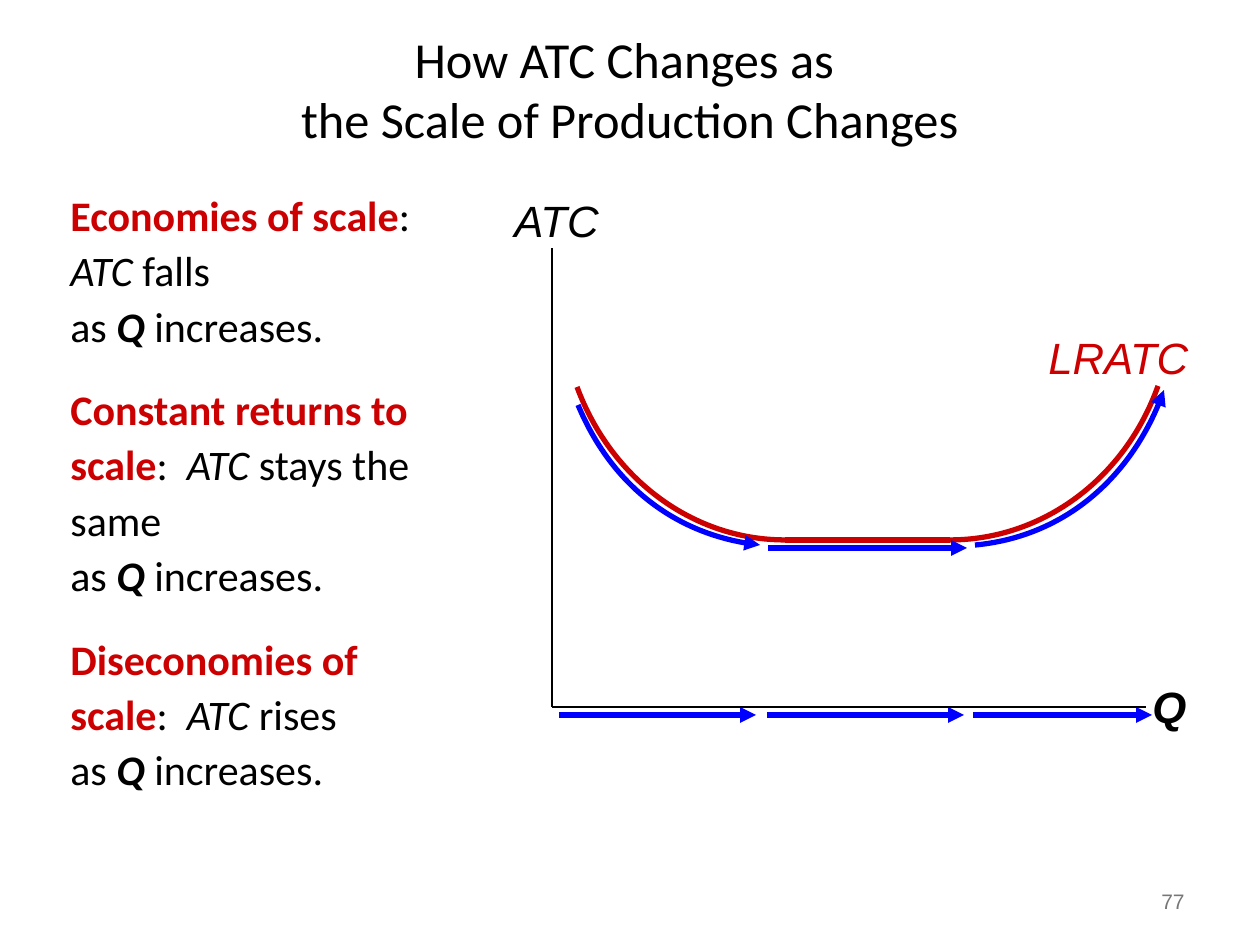
from dataclasses import dataclass

from lxml.etree import SubElement
from pptx import Presentation
from pptx.dml.color import RGBColor as RGB
from pptx.enum.shapes import MSO_CONNECTOR as Connector
from pptx.enum.text import MSO_ANCHOR as Anchor, PP_ALIGN as Align
from pptx.oxml.ns import qn
from pptx.util import Pt

EMU_PER_PX = 914400 / 126


@dataclass(frozen=True)
class Theme:
    black: RGB = RGB(0x00, 0x00, 0x00)
    red: RGB = RGB(0xCC, 0x00, 0x00)
    blue: RGB = RGB(0x00, 0x00, 0xFF)
    grey: RGB = RGB(0x77, 0x77, 0x77)
    heading_font: str = "Calibri"
    label_font: str = "Arial"
    title_size: float = 28.8
    body_size: float = 24
    label_size: float = 25
    number_size: float = 12
    curve_width: float = 3
    axis_width: float = 0.75


THEME = Theme()


def px(length):
    return round(length * EMU_PER_PX)


def add_text(slide, box, paragraphs, *, font, size, color=THEME.black,
             align=Align.LEFT, anchor=Anchor.TOP, line_spacing=None,
             space_before=0, italic=False, bold=False):
    """Each paragraph is a list of (words, overrides); a newline is a line break."""
    frame = slide.shapes.add_textbox(*map(px, box)).text_frame
    frame.word_wrap = True
    frame.vertical_anchor = anchor
    for index, pieces in enumerate(paragraphs):
        paragraph = frame.add_paragraph() if index else frame.paragraphs[0]
        paragraph.alignment = align
        paragraph.line_spacing = line_spacing
        paragraph.space_before = Pt(space_before)
        for words, override in pieces:
            for number, line in enumerate(words.split("\n")):
                if number:
                    paragraph.add_line_break()
                run = paragraph.add_run()
                run.text = line
                run.font.name = font
                run.font.size = Pt(size)
                run.font.bold = override.get("bold", bold)
                run.font.italic = override.get("italic", italic)
                run.font.color.rgb = override.get("color", color)


def style_stroke(stroke, color, width, arrow):
    stroke.line.color.rgb = color
    stroke.line.width = Pt(width)
    if arrow:
        SubElement(stroke.line._get_or_add_ln(), qn("a:tailEnd"), type="triangle")


def add_line(slide, start, end, color, width=THEME.curve_width, arrow=False):
    line = slide.shapes.add_connector(Connector.STRAIGHT, *map(px, start + end))
    style_stroke(line, color, width, arrow)
    SubElement(line._element.spPr, qn("a:effectLst"))


def add_curve(slide, points, color, arrow=False):
    """Draw one cubic curve from start, two control points and end."""
    start, *others = [(px(x), px(y)) for x, y in points]
    builder = slide.shapes.build_freeform(*start)
    builder.add_line_segments(others, close=False)
    curve = builder.convert_to_shape()
    curve.shadow.inherit = False
    curve.fill.background()
    style_stroke(curve, color, THEME.curve_width, arrow)
    # Merge the three straight segments into one Bézier segment
    segments = curve._element.findall(".//" + qn("a:lnTo"))
    outline = segments[0].getparent()
    bezier = SubElement(outline, qn("a:cubicBezTo"))
    for segment in segments:
        bezier.append(segment[0])
        outline.remove(segment)


def scale_effect(term, effect):
    return [
        (term, {"bold": True, "color": THEME.red}),
        (":  ", {}),
        ("ATC", {"italic": True}),
        (f" {effect} \nas ", {}),
        ("Q", {"bold": True, "italic": True}),
        (" increases.", {}),
    ]


def add_label(slide, box, words, **style):
    add_text(slide, box, [[(words, {})]], font=THEME.label_font,
             size=THEME.label_size, italic=True, **style)


def add_explanations(slide):
    add_text(slide, (58, 178, 402, 685), [
        scale_effect("Economies of scale", "falls"),
        scale_effect("Constant returns to scale", "stays the same"),
        scale_effect("Diseconomies of scale", "rises"),
    ], font=THEME.heading_font, size=THEME.body_size, line_spacing=1.1,
        space_before=16)


def add_cost_graph(slide):
    # Long-run average total cost
    add_label(slide, (1036, 325, 178, 66), "LRATC", color=THEME.red)
    add_curve(slide, [(577, 387), (611, 479), (693, 540), (785, 540)], THEME.red)
    add_line(slide, (785, 540), (950, 540), THEME.red)
    add_curve(slide, [(950, 540), (1042, 540), (1125, 479), (1158, 386)], THEME.red)

    # Falling, constant and rising cost
    add_curve(slide, [(578, 405), (611, 484), (680, 537), (760, 545)],
              THEME.blue, arrow=True)
    add_line(slide, (768, 548), (967, 548), THEME.blue, arrow=True)
    add_curve(slide, [(975, 545), (1061, 537), (1134, 476), (1164, 390)],
              THEME.blue, arrow=True)

    # Rising quantity in each range
    for left, right in [(559, 756), (767, 964), (973, 1152)]:
        add_line(slide, (left, 715), (right, 715), THEME.blue, arrow=True)

    # Axes
    origin = (552, 707)
    for axis_end in [(552, 248), (1146, 707)]:
        add_line(slide, origin, axis_end, THEME.black, THEME.axis_width)
    add_label(slide, (1140, 674, 73, 66), "Q", bold=True)
    add_label(slide, (486, 188, 125, 66), "ATC", align=Align.RIGHT)


def main():
    deck = Presentation()
    deck.slide_width, deck.slide_height = px(1260), px(945)
    slide = deck.slides.add_slide(deck.slide_layouts[6])

    # Title and slide number
    add_text(slide, (0, 35, 1260, 107),
             [[("How ATC Changes as \nthe Scale of Production Changes", {})]],
             font=THEME.heading_font, size=THEME.title_size,
             align=Align.CENTER, anchor=Anchor.MIDDLE)
    add_text(slide, (903, 876, 294, 50), [[("77", {})]],
             font=THEME.label_font, size=THEME.number_size, color=THEME.grey,
             align=Align.RIGHT, anchor=Anchor.MIDDLE)

    add_explanations(slide)
    add_cost_graph(slide)
    deck.save("out.pptx")


if __name__ == "__main__":
    main()
